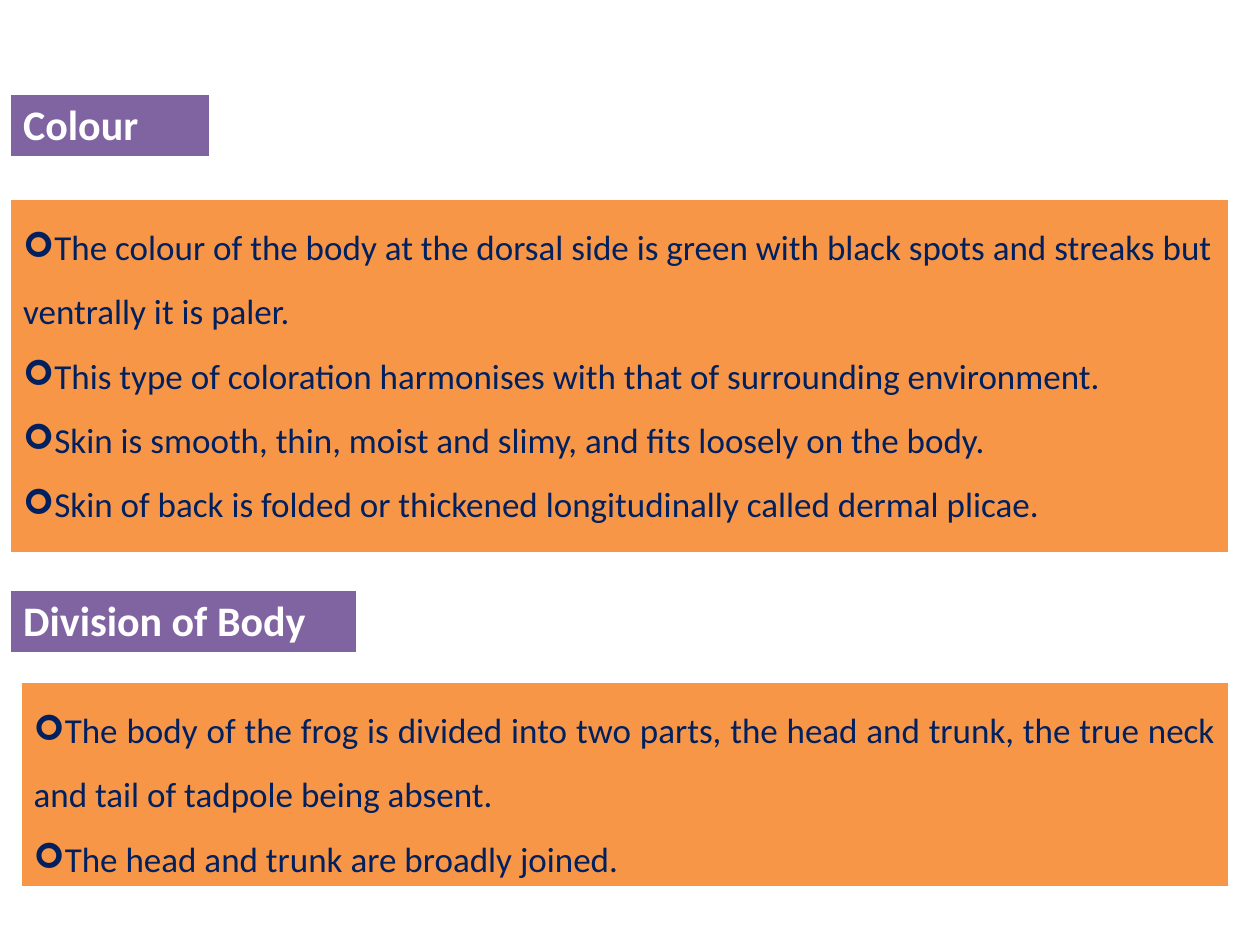
from dataclasses import dataclass

from lxml import etree
from pptx import Presentation
from pptx.dml.color import RGBColor
from pptx.enum.text import MSO_ANCHOR, PP_ALIGN
from pptx.oxml.ns import qn
from pptx.util import Pt

LEFT, JUSTIFY = PP_ALIGN.LEFT, PP_ALIGN.JUSTIFY
TOP, MIDDLE = MSO_ANCHOR.TOP, MSO_ANCHOR.MIDDLE

PX = 7620  # EMU per px, 120 px to the inch
BLANK_LAYOUT = 6


@dataclass(frozen=True)
class Theme:
    font: str = "Calibri"
    heading_size: int = 24
    body_size: int = 20
    heading_fill: str = "8064A2"
    heading_text: str = "FFFFFF"
    body_fill: str = "F79646"
    body_text: str = "002060"
    border: str = "FFFFFF"


THEME = Theme()
BORDER_POINTS = {"lnL": 1, "lnR": 1, "lnT": 1, "lnB": 3}

COLOUR_FACTS = [
    "The colour of the body at the dorsal side is green with black spots and streaks but ventrally it is paler.",
    "This type of coloration harmonises with that of surrounding environment.",
    "Skin is smooth, thin, moist and slimy, and fits loosely on the body.",
    "Skin of back is folded or thickened longitudinally called dermal plicae.",
]
DIVISION_FACTS = [
    "The body of the frog is divided into two parts, the head and trunk, "
    "the true neck and tail of tadpole being absent.",
    "The head and trunk are broadly joined.",
]


def set_borders(cell):
    properties = cell._tc.get_or_add_tcPr()
    for index, (side, points) in enumerate(BORDER_POINTS.items()):
        line = etree.Element(qn(f"a:{side}"), w=str(Pt(points)))
        fill = etree.SubElement(line, qn("a:solidFill"))
        etree.SubElement(fill, qn("a:srgbClr"), val=THEME.border)
        properties.insert(index, line)


def add_bullet(paragraph):
    properties = paragraph._p.get_or_add_pPr()
    etree.SubElement(properties, qn("a:buFont"), typeface="Wingdings")
    etree.SubElement(properties, qn("a:buChar"), char="➢")


def add_panel(slide, box, fill, anchor):
    """Add a table of one filled cell and return the cell."""
    table = slide.shapes.add_table(1, 1, *(value * PX for value in box)).table
    cell = table.cell(0, 0)
    cell.fill.solid()
    cell.fill.fore_color.rgb = RGBColor.from_string(fill)
    cell.vertical_anchor = anchor
    set_borders(cell)
    return cell


def add_text(paragraph, text, size, color, bold):
    run = paragraph.add_run()
    run.text = text
    for name, value in {"name": THEME.font, "size": Pt(size), "bold": bold}.items():
        setattr(run.font, name, value)
    run.font.color.rgb = RGBColor.from_string(color)


def add_heading(slide, box, text):
    cell = add_panel(slide, box, THEME.heading_fill, MIDDLE)
    add_text(cell.text_frame.paragraphs[0], text, THEME.heading_size, THEME.heading_text, True)


def add_facts(slide, box, facts, alignment):
    frame = add_panel(slide, box, THEME.body_fill, TOP).text_frame
    for index, fact in enumerate(facts):
        paragraph = frame.add_paragraph() if index else frame.paragraphs[0]
        for name, value in {"alignment": alignment, "line_spacing": 1.5}.items():
            setattr(paragraph, name, value)
        add_bullet(paragraph)
        add_text(paragraph, fact, THEME.body_size, THEME.body_text, False)


def main():
    presentation = Presentation()
    presentation.slide_width, presentation.slide_height = 1200 * PX, 900 * PX
    slide = presentation.slides.add_slide(presentation.slide_layouts[BLANK_LAYOUT])

    # Colour section
    add_heading(slide, (10, 90, 190, 60), "Colour")
    add_facts(slide, (10, 190, 1160, 338), COLOUR_FACTS, LEFT)

    # Division of body section
    add_heading(slide, (10, 562, 330, 60), "Division of Body")
    add_facts(slide, (20, 650, 1150, 192), DIVISION_FACTS, JUSTIFY)

    presentation.save("out.pptx")


if __name__ == "__main__":
    main()
